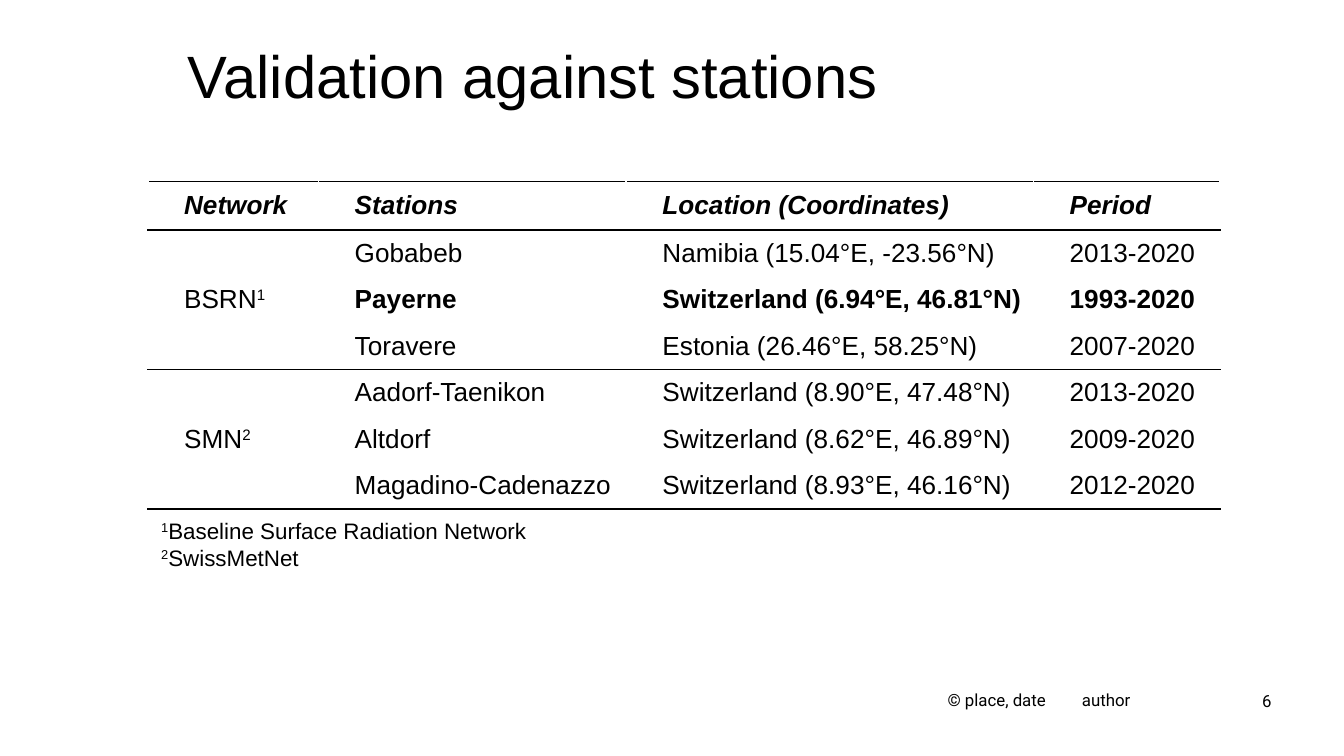
"""Build the slide that lists the validation stations in a ruled table."""
from lxml import etree
from pptx import Presentation
from pptx.dml.color import RGBColor
from pptx.enum.text import MSO_ANCHOR, PP_ALIGN
from pptx.oxml.ns import qn
from pptx.util import Inches, Pt

MIDDLE, TOP = MSO_ANCHOR.MIDDLE, MSO_ANCHOR.TOP
LEFT, RIGHT = PP_ALIGN.LEFT, PP_ALIGN.RIGHT
COLORS = {"ink": "000000", "paper": "FFFFFF"}

TITLE = "Validation against stations"
ROWS = [
    ("Network", "Stations", "Location (Coordinates)", "Period"),
    ("", "Gobabeb", "Namibia (15.04°E, -23.56°N)", "2013-2020"),
    (("BSRN", "1"), "Payerne", "Switzerland (6.94°E, 46.81°N)", "1993-2020"),
    ("", "Toravere", "Estonia (26.46°E, 58.25°N)", "2007-2020"),
    ("", "Aadorf-Taenikon", "Switzerland (8.90°E, 47.48°N)", "2013-2020"),
    (("SMN", "2"), "Altdorf", "Switzerland (8.62°E, 46.89°N)", "2009-2020"),
    ("", "Magadino-Cadenazzo", "Switzerland (8.93°E, 46.16°N)", "2012-2020"),
]
COLUMN_WIDTHS = (1.27, 2.29, 3.03, 1.39)
TABLE_HEIGHT, HEADER_HEIGHT = 2.44, 0.36
ROW_HEIGHT = (TABLE_HEIGHT - HEADER_HEIGHT) / (len(ROWS) - 1)
RULED_BELOW = (0, 3, 6)
BOLD_STATION = "Payerne"
FOOTNOTES = [("1", "Baseline Surface Radiation Network"), ("2", "SwissMetNet")]
FOOTER = "© place, date\tauthor"
PAGE_NUMBER = "6"


def add_span(para, text, size, name="Arial", bold=False, italic=False):
    span = para.add_run()
    span.text = text
    font = span.font
    font.size, font.name, font.bold, font.italic = Pt(size), name, bold, italic
    font.color.rgb = RGBColor.from_string(COLORS["ink"])
    if text in ("1", "2"):
        font._element.set("baseline", "30000")


def add_text(page, place, lines, size, name="Arial", align=LEFT, anchor=TOP):
    box = page.shapes.add_textbox(*map(Inches, place))
    frame = box.text_frame
    frame.word_wrap = True
    frame.vertical_anchor = anchor
    for index, line in enumerate(lines):
        para = frame.add_paragraph() if index else frame.paragraphs[0]
        para.alignment = align
        for text in line:
            add_span(para, text, size, name)
    return frame


def set_borders(cell, row):
    sides = {"L": "paper", "R": "paper",
             "T": "ink" if row == 0 or row - 1 in RULED_BELOW else "paper",
             "B": "ink" if row in RULED_BELOW else "paper"}
    properties = cell._tc.get_or_add_tcPr()
    for position, (side, color) in enumerate(sides.items()):
        line = etree.Element(qn(f"a:ln{side}"), w=str(Pt(1)))
        fill = etree.SubElement(line, qn("a:solidFill"))
        etree.SubElement(fill, qn("a:srgbClr"), val=COLORS[color])
        properties.insert(position, line)


def fill_cell(cell, content, row, bold):
    cell.fill.background()
    cell.vertical_anchor = MIDDLE
    cell.margin_left = cell.margin_right = Inches(0.07)
    cell.margin_top = cell.margin_bottom = 0
    set_borders(cell, row)
    para = cell.text_frame.paragraphs[0]
    para._p.get_or_add_pPr().set("indent", str(Inches(0.2)))
    if row == 0:
        para.space_after = Pt(10)
    for text in (content if isinstance(content, tuple) else (content,)):
        if text:
            add_span(para, text, 14, bold=bold, italic=row == 0)


def add_station_table(page):
    table = page.shapes.add_table(
        len(ROWS), len(COLUMN_WIDTHS), Inches(1.1), Inches(1.35),
        Inches(sum(COLUMN_WIDTHS)), Inches(TABLE_HEIGHT)).table
    table.first_row = table.horz_banding = False
    for column, width in zip(table.columns, COLUMN_WIDTHS):
        column.width = Inches(width)
    for row, contents in enumerate(ROWS):
        table.rows[row].height = Inches(ROW_HEIGHT if row else HEADER_HEIGHT)
        for column, content in enumerate(contents):
            bold = row == 0 or (column > 0 and contents[1] == BOLD_STATION)
            fill_cell(table.cell(row, column), content, row, bold)


def main():
    deck = Presentation()
    deck.slide_width = Inches(10)
    deck.slide_height = deck.slide_width * 9 // 16
    page = deck.slides.add_slide(deck.slide_layouts[6])
    footer = add_text(page, (5.6, 5.08, 2.85, 0.3), [[FOOTER]], 9, "Roboto", RIGHT)
    footer.margin_left, footer.margin_right = 0, Inches(0.04)
    add_text(page, (8.38, 5.09, 1.18, 0.25), [[PAGE_NUMBER]], 9, "Roboto", RIGHT)
    title = add_text(page, (1.3, 0.2, 8.22, 0.77), [[TITLE]], 32, anchor=MIDDLE)
    title.margin_bottom = Inches(0.11)
    add_station_table(page)
    add_text(page, (1.1, 3.8, 5.14, 0.5), FOOTNOTES, 12)
    deck.save("out.pptx")


if __name__ == "__main__":
    main()
